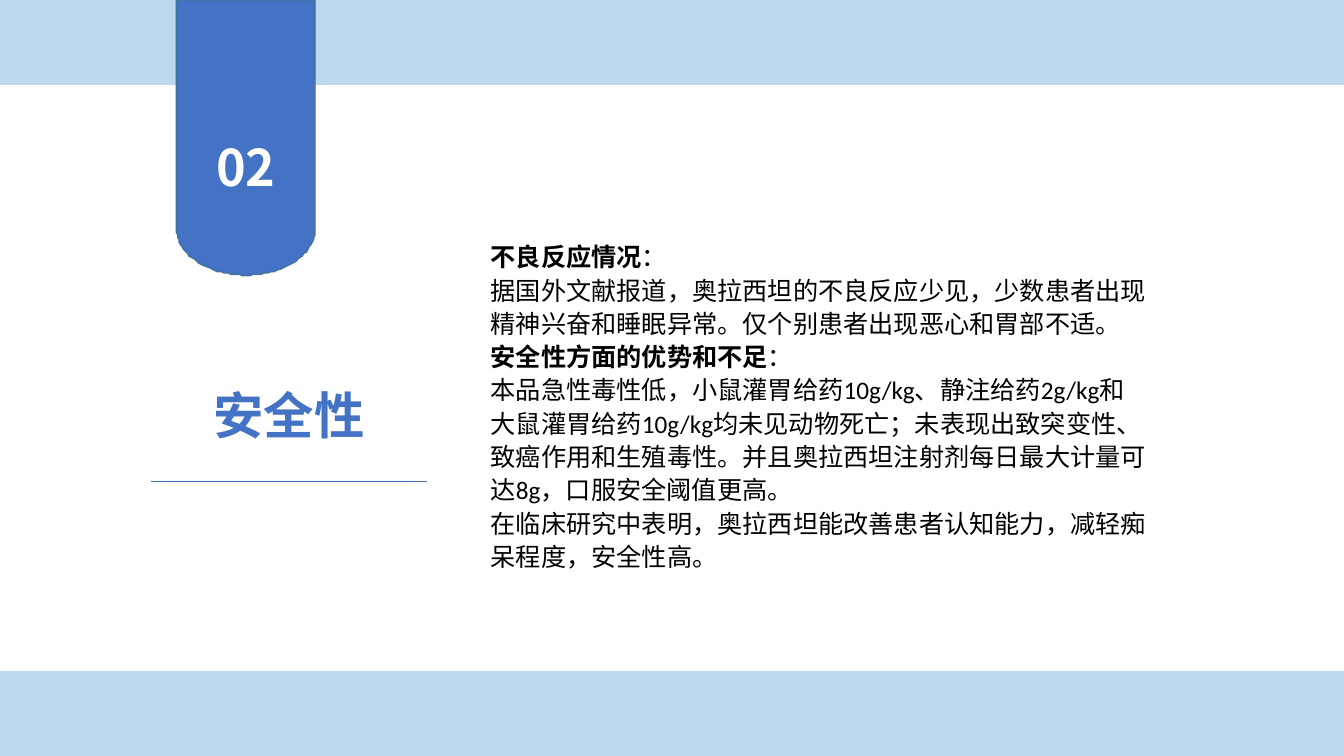
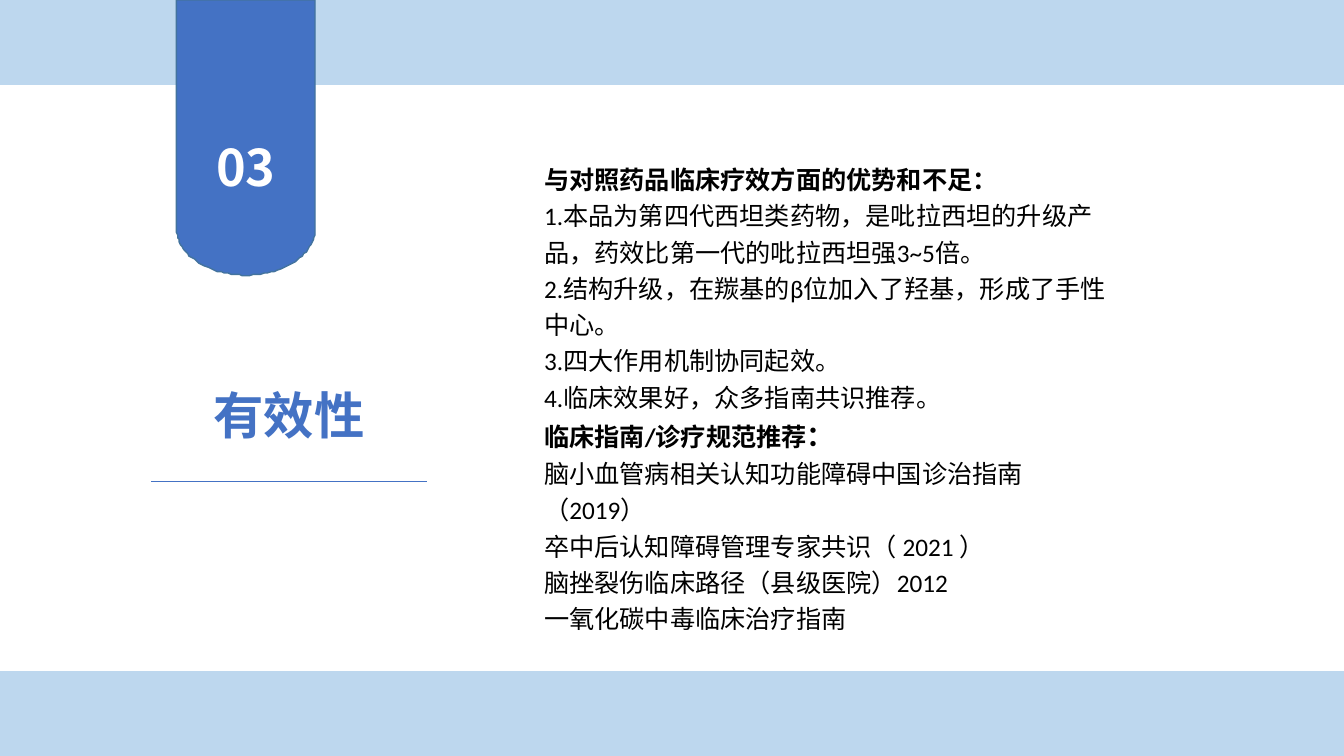
import math

import lxml.etree
import pptx
import pptx.dml.color
import pptx.enum.shapes
import pptx.enum.text
import pptx.oxml.ns
import pptx.util

Pt = pptx.util.Pt
SHAPE = pptx.enum.shapes.MSO_SHAPE
ALIGN = pptx.enum.text.PP_ALIGN

# Content: each paragraph is a list of (text, format) runs
BOLD = {"bold": True}
PLAIN = {"bold": False}
SECTIONS = [
    {
        "number": "02",
        "title": "安全性",
        "box": (343.5, 167, 482.4, 246.2),
        "line_spacing": 1.1,
        "body": [
            [("不良反应情况", BOLD), ("：", PLAIN)],
            [("据国外文献报道，奥拉西坦的不良反应少见，少数患者出现精神兴奋和睡眠异常。仅个别患者出现恶心和胃部不适。", PLAIN)],
            [("安全性方面的优势和不足", BOLD), ("：", PLAIN)],
            [("本品急性毒性低，小鼠灌胃给药10g/kg、静注给药2g/kg和大鼠灌胃给药10g/kg均未见动物死亡；"
              "未表现出致突变性、致癌作用和生殖毒性。并且奥拉西坦注射剂每日最大计量可达8g，口服安全阈值更高。", PLAIN)],
            [("在临床研究中表明，奥拉西坦能改善患者认知能力，减轻痴呆程度，安全性高。", PLAIN)],
        ],
    },
    {
        "number": "03",
        "title": "有效性",
        "box": (381.6, 109.5, 421.9, 322.6),
        "line_spacing": 1.2,
        "body": [
            [("与对照药品临床疗效方面的优势和不足：", BOLD)],
            [("1.本品为第四代西坦类药物，是吡拉西坦的升级产品，药效比第一代的吡拉西坦强3~5倍。", PLAIN)],
            [("2.结构升级，在羰基的β位加入了羟基，形成了手性中心。", PLAIN)],
            [("3.四大作用机制协同起效。", PLAIN)],
            [("4.临床效果好，众多指南共识推荐。", PLAIN)],
            [("临床指南/诊疗规范推荐", BOLD), ("：", {"bold": True, "size": Pt(20)})],
            [("脑小血管病相关认知功能障碍中国诊治指南（2019）", PLAIN)],
            [("卒中后认知障碍管理专家共识（ 2021 ）", PLAIN)],
            [("脑挫裂伤临床路径（县级医院）2012", PLAIN)],
            [("一氧化碳中毒临床治疗指南", PLAIN)],
        ],
    },
]

# Shared style
COLORS = {"band": "BDD7EE", "accent": "4472C4", "ribbon_edge": "43739E",
          "text": "000000", "number": "FFFFFF"}
LATIN_FONT, CHINESE_FONT = "Calibri", "Noto Sans CJK SC"
BODY_STYLE = {"name": LATIN_FONT, "size": Pt(18)}
TITLE_STYLE = {"name": LATIN_FONT, "size": Pt(36), "bold": True}
NUMBER_STYLE = {"name": CHINESE_FONT, "size": Pt(36), "bold": True}

# Shared layout, in points
WIDTH, HEIGHT, BAND_HEIGHT = 960, 540, 60
RIBBON = {"left": 126, "right": 225.4, "straight": 162.5, "bottom": 196.6}
NUMBER_BOX = (144.7, 93.6, 61.9, 51.1)
TITLE_BOX = (145.4, 270.7, 122.4, 51.1)
RULE = (108, 344.2, 305.3, 344.2)


def rgb(color):
    return pptx.dml.color.RGBColor.from_string(COLORS[color])


def paint(shape, fill, line=None):
    shape.shadow.inherit = False
    shape.fill.solid()
    shape.fill.fore_color.rgb = rgb(fill)
    if line:
        shape.line.color.rgb = rgb(line)
        shape.line.width = Pt(1)
    else:
        shape.line.fill.background()


def write(shape, paragraphs, style, color, align=ALIGN.LEFT, spacing=None, wrap=True):
    frame = shape.text_frame
    frame.word_wrap = wrap
    frame.vertical_anchor = pptx.enum.text.MSO_ANCHOR.TOP
    for index, runs in enumerate(paragraphs):
        paragraph = frame.add_paragraph() if index else frame.paragraphs[0]
        paragraph.alignment = align
        paragraph.line_spacing = spacing
        for text, changes in runs:
            run = paragraph.add_run()
            run.text = text
            run.font.color.rgb = rgb(color)
            for name, value in {**style, **changes}.items():
                setattr(run.font, name, value)
            # Chinese typeface
            east_asian = lxml.etree.SubElement(run.font._element, pptx.oxml.ns.qn("a:ea"))
            east_asian.set("typeface", CHINESE_FONT)


def add_ribbon(slide):
    left, right, straight, bottom = (RIBBON[key] for key in ("left", "right", "straight", "bottom"))
    radius = (right - left) / 2
    arc = [(left + radius + radius * math.cos(math.radians(angle)),
            straight + (bottom - straight) * math.sin(math.radians(angle)))
           for angle in range(0, 181, 3)]
    builder = slide.shapes.build_freeform(left, 0, scale=Pt(1))
    builder.add_line_segments([(right, 0), *arc], close=True)
    paint(builder.convert_to_shape(), "accent", "ribbon_edge")


def add_rule(slide):
    line = slide.shapes.add_connector(
        pptx.enum.shapes.MSO_CONNECTOR.STRAIGHT, *map(Pt, RULE))
    line.line.color.rgb = rgb("accent")
    line.line.width = Pt(0.5)
    lxml.etree.SubElement(line._element.spPr, pptx.oxml.ns.qn("a:effectLst"))


def add_section(presentation, section):
    slide = presentation.slides.add_slide(presentation.slide_layouts[6])
    shapes = slide.shapes

    # Bands at top and bottom
    for top in (0, HEIGHT - BAND_HEIGHT):
        band = shapes.add_shape(SHAPE.RECTANGLE, 0, Pt(top), Pt(WIDTH), Pt(BAND_HEIGHT))
        paint(band, "band", "band")

    # Ribbon with section number
    add_ribbon(slide)
    number = shapes.add_shape(SHAPE.RECTANGLE, *map(Pt, NUMBER_BOX))
    paint(number, "accent")
    write(number, [[(section["number"], {})]], NUMBER_STYLE, "number", ALIGN.CENTER)

    # Body text
    body = shapes.add_textbox(*map(Pt, section["box"]))
    write(body, section["body"], BODY_STYLE, "text", spacing=section["line_spacing"])

    # Underlined title
    title = shapes.add_textbox(*map(Pt, TITLE_BOX))
    write(title, [[(section["title"], {})]], TITLE_STYLE, "accent", ALIGN.CENTER, wrap=False)
    add_rule(slide)


def main():
    presentation = pptx.Presentation()
    presentation.slide_width, presentation.slide_height = Pt(WIDTH), Pt(HEIGHT)
    for section in SECTIONS:
        add_section(presentation, section)
    presentation.save("out.pptx")


if __name__ == "__main__":
    main()
